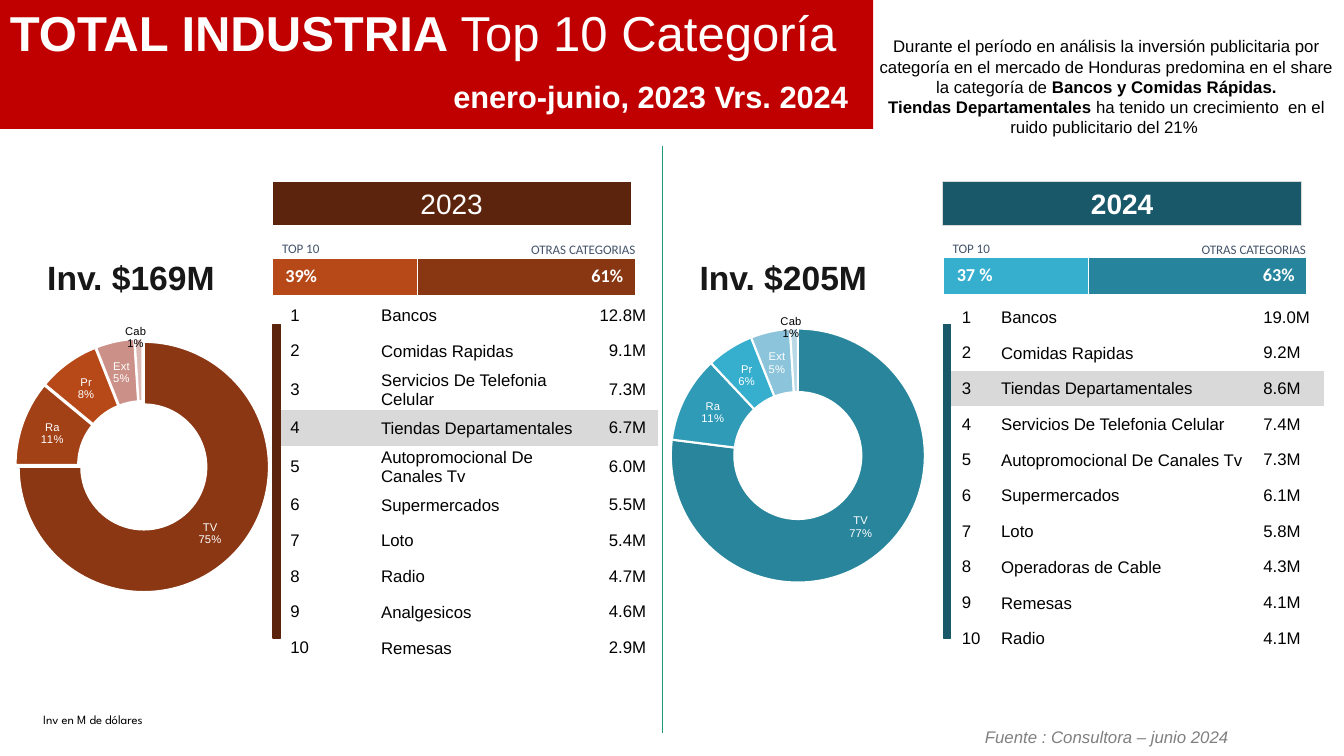
from lxml import etree
from pptx import Presentation
from pptx.chart.data import CategoryChartData
from pptx.dml.color import RGBColor
from pptx.enum.chart import XL_CHART_TYPE as CT
from pptx.enum.shapes import MSO_CONNECTOR as CONN, MSO_SHAPE as SHAPE
from pptx.enum.text import MSO_ANCHOR as ANCHOR, PP_ALIGN as ALIGN
from pptx.oxml import parse_xml
from pptx.oxml.ns import nsdecls, qn
from pptx.util import Inches, Pt

C = dict(white="FFFFFF", black="000000", red="C00000", mark="D9D9D9", slate="44546A",
         ink="181717", gray="808080", green="1D9A78", brown="5C240C", teal="195869")
NO_GRID = "{2D5ABB26-0587-4C30-8999-92F81FD0307C}"
L, M, R = ALIGN.LEFT, ALIGN.CENTER, ALIGN.RIGHT
BOLD = dict(bold=True)

INTRO = [
    [("Durante el período en análisis la inversión publicitaria por categoría en el mercado "
      "de Honduras predomina en el share la categoría de ", {}),
     ("Bancos y Comidas Rápidas.", BOLD)],
    [("Tiendas Departamentales ", BOLD),
     ("ha tenido un crecimiento  en el ruido publicitario del 21% ", {})],
]
TITLE = [[("TOTAL INDUSTRIA ", BOLD), ("Top 10 Categoría", {})]]
MEDIA = ["TV", "Ra", "Pr", "Ext", "Cab"]

YEARS = [
    dict(year="2023", bold=False, x=2.7, dark=C["brown"], edge=C["white"],
         share=[("39%", "B74919"), ("61%", "893713")], share_at=(2.7, 2.56),
         inv="Inv. $169M", inv_x=0.37, chart_at=(-0.5, 3.22), explode=3, cab=(-0.01, -0.12),
         mix=[75, 11, 8, 5, 1], ring=["8B3713", "A24116", "B74919", "CB9188", "DCBBB6"],
         rank_at=(2.75, 2.95), cols=[0.52, 2.52, 0.74], indent=0.5, amount_align=R, marked=4,
         rank=[("Bancos", "12.8M"), ("Comidas Rapidas", "9.1M"),
               ("Servicios De Telefonia Celular", "7.3M"), ("Tiendas Departamentales", "6.7M"),
               ("Autopromocional De Canales Tv", "6.0M"), ("Supermercados", "5.5M"),
               ("Loto", "5.4M"), ("Radio", "4.7M"), ("Analgesicos", "4.6M"),
               ("Remesas", "2.9M")]),
    dict(year="2024", bold=True, x=9.35, dark=C["teal"], edge=C["mark"],
         share=[("37 %", "36AFCE"), ("63%", "26859D")], share_at=(9.36, 2.55),
         inv="Inv. $205M", inv_x=6.84, chart_at=(6, 3.12), explode=0, cab=(-0.01, -0.12),
         mix=[77, 11, 6, 5, 1], ring=["29859C", "309BB7", "36AFCE", "8CC5DB", "B9D9E6"],
         rank_at=(9.41, 2.97), cols=[0.51, 2.48, 0.73], indent=0, amount_align=L, marked=3,
         rank=[("Bancos", "19.0M"), ("Comidas Rapidas", "9.2M"),
               ("Tiendas Departamentales", "8.6M"), ("Servicios De Telefonia Celular", "7.4M"),
               ("Autopromocional De Canales Tv", "7.3M"), ("Supermercados", "6.1M"),
               ("Loto", "5.8M"), ("Operadoras de Cable", "4.3M"), ("Remesas", "4.1M"),
               ("Radio", "4.1M")]),
]

prs = Presentation()
prs.slide_width, prs.slide_height = Inches(13.33), Inches(7.5)
s = prs.slides.add_slide(prs.slide_layouts[6])


def box(*at):
    return [Inches(v) for v in at]


def style(font, size, color, name="Arial", **fmt):
    for key, value in dict(fmt, size=Pt(size), name=name).items():
        setattr(font, key, value)
    font.color.rgb = RGBColor.from_string(color)


def write(tf, text, size, color, align=L, **fmt):
    paragraphs = [[(text, {})]] if isinstance(text, str) else text
    for i, runs in enumerate(paragraphs):
        p = tf.add_paragraph() if i else tf.paragraphs[0]
        p.alignment = align
        for words, extra in runs:
            r = p.add_run()
            r.text = words
            style(r.font, size, color, **{**fmt, **extra})


def label(at, text, size, color, wrap=True, **fmt):
    tf = s.shapes.add_textbox(*box(*at)).text_frame
    tf.word_wrap = wrap
    write(tf, text, size, color, **fmt)


def rect(at, fill, line=None, width=0.75):
    sp = s.shapes.add_shape(SHAPE.RECTANGLE, *box(*at))
    sp.shadow.inherit = False
    sp.fill.solid()
    sp.fill.fore_color.rgb = RGBColor.from_string(fill)
    if line:
        sp.line.color.rgb = RGBColor.from_string(line)
        sp.line.width = Pt(width)
    else:
        sp.line.fill.background()
    return sp


def table(rows, cols, at, height):
    frame = s.shapes.add_table(rows, len(cols), *box(*at, sum(cols), height))
    tbl = frame.table
    tbl.first_row = tbl.horz_banding = False
    next(frame.element.iter(qn("a:tableStyleId"))).text = NO_GRID
    for col, width in zip(tbl.columns, cols):
        col.width = Inches(width)
    return tbl


def fill_cell(cell, text, size, color, fill=None, ins=(0.13, 0.07, 0.12, 0.07), **fmt):
    sides = ("margin_left", "margin_top", "margin_right", "margin_bottom")
    for side, value in zip(sides, ins):
        setattr(cell, side, Inches(value))
    if fill:
        cell.fill.solid()
        cell.fill.fore_color.rgb = RGBColor.from_string(fill)
    else:
        cell.fill.background()
    write(cell.text_frame, text, size, color, **fmt)


def share_bar(d):
    tbl = table(1, [1.44, 2.16], d["share_at"], 0.39)
    for cell, (text, fill), align in zip(tbl.rows[0].cells, d["share"], (L, R)):
        fill_cell(cell, text, 13, C["white"], fill, name="Calibri", bold=True, align=align)
        tc_pr = next(cell.text_frame._txBody.getparent().iter(qn("a:tcPr")))
        for i, (side, pt) in enumerate(dict(L=1, R=1, T=1, B=3).items()):
            tc_pr.insert(i, parse_xml(
                f'<a:ln{side} {nsdecls("a")} w="{Pt(pt)}"><a:solidFill>'
                f'<a:srgbClr val="{C["white"]}"/></a:solidFill></a:ln{side}>'))


def ranking(d):
    tbl = table(len(d["rank"]), d["cols"], d["rank_at"], 3.54)
    for n, (category, amount) in enumerate(d["rank"], 1):
        fill = C["mark"] if n == d["marked"] else None
        cells = tbl.rows[n - 1].cells
        for cell in cells:
            cell.vertical_anchor = ANCHOR.MIDDLE
        fill_cell(cells[0], str(n), 12, C["black"], fill)
        fill_cell(cells[1], category, 12, C["black"], fill, ins=(0.01, 0.01, 0.01, 0))
        fill_cell(cells[2], amount, 12, C["black"], fill, align=d["amount_align"])
        p_pr = cells[1].text_frame.paragraphs[0]._p.get_or_add_pPr()
        p_pr.set("marL", str(Inches(d["indent"])))


def layout(**values):
    parts = "".join(f'<c:{k} val="{v}"/>' for k, v in values.items())
    return parse_xml(f'<c:layout {nsdecls("c")}><c:manualLayout>{parts}</c:manualLayout></c:layout>')


def show_share(node):
    for tag, on in dict(showVal=0, showCatName=1, showPercent=1).items():
        node.find(qn("c:" + tag)).set("val", str(on))
    last = node.find(qn("c:showBubbleSize"))
    if last is None:
        last = node.find(qn("c:showPercent"))
    sep = etree.Element(qn("c:separator"))
    sep.text = "\n"
    last.addnext(sep)


def doughnut(d):
    data = CategoryChartData()
    data.categories = MEDIA
    data.add_series("Series 1", d["mix"])
    chart = s.shapes.add_chart(CT.DOUGHNUT, *box(*d["chart_at"], 3.79, 2.8), data).chart
    chart.has_legend = chart.has_title = False
    style(chart.font, 10, C["black"])
    plot = chart.plots[0]
    plot.vary_by_categories = True
    area = chart._chartSpace.chart.plotArea
    for old in area.findall(qn("c:layout")):
        area.remove(old)
    area.insert(0, layout(layoutTarget="inner", xMode="edge", yMode="edge",
                          x=0.17, y=0.05, w=0.67, h=0.9))
    ser = plot.series[0]
    for i, color in enumerate(d["ring"]):
        fmt = ser.points[i].format
        fmt.fill.solid()
        fmt.fill.fore_color.rgb = RGBColor.from_string(color)
        fmt.line.color.rgb = RGBColor.from_string(C["white"])
        fmt.line.width = Pt(1.5)
    if d["explode"]:
        ser._element.find(qn("c:dPt")).addprevious(
            parse_xml(f'<c:explosion {nsdecls("c")} val="{d["explode"]}"/>'))
    labels = ser.data_labels
    style(labels.font, 8, C["white"])
    labels.number_format, labels.number_format_is_linked = "0%", False
    show_share(labels._element)
    style(ser.points[len(MEDIA) - 1].data_label.font, 8, C["black"])
    cab = next(ser._element.iter(qn("c:dLbl")))
    show_share(cab)
    cab.find(qn("c:idx")).addnext(layout(x=d["cab"][0], y=d["cab"][1]))


label((8.62, 0.31, 4.71, 1.11), INTRO, 12, C["black"], align=M)
label((0.33, 7.01, 1.69, 0.25), "Inv en M de dólares", 9, C["black"], name="League Spartan")
banner = rect((0, -0.02, 8.66, 1.3), C["red"]).text_frame
banner.vertical_anchor = ANCHOR.TOP
write(banner, TITLE, 35, C["white"])
label((3.29, 0.72, 5.22, 0.47), "enero-junio, 2023 Vrs. 2024", 22, C["white"], align=R, bold=True)

for d in YEARS:
    x = d["x"]
    header = rect((x, 1.8, 3.56, 0.44), d["dark"], d["edge"])
    write(header.text_frame, d["year"], 20, C["white"], align=M, bold=d["bold"])
    share_bar(d)
    ranking(d)
    label((x, 2.34, 1.18, 0.26), "TOP 10", 9.3, C["slate"], name="Calibri")
    label((x + 2.03, 2.35, 1.67, 0.26), "OTRAS CATEGORIAS", 9.3, C["slate"], name="Calibri", align=R)
    rect((x + 0.01, 3.22, 0.07, 3.11), d["dark"], d["dark"], 1)
    doughnut(d)
    label((d["inv_x"], 2.5, 1.87, 0.5), d["inv"], 24, C["ink"], wrap=False, bold=True)

divider = s.shapes.add_connector(CONN.STRAIGHT, *box(6.57, 1.45, 6.57, 7.27))
divider.line.color.rgb = RGBColor.from_string(C["green"])
divider.line.width = Pt(0.5)
etree.SubElement(divider._element.spPr, qn("a:effectLst"))
label((9.67, 7.16, 2.69, 0.3), "Fuente : Consultora – junio 2024", 12, C["gray"],
      wrap=False, italic=True)

prs.save("out.pptx")
